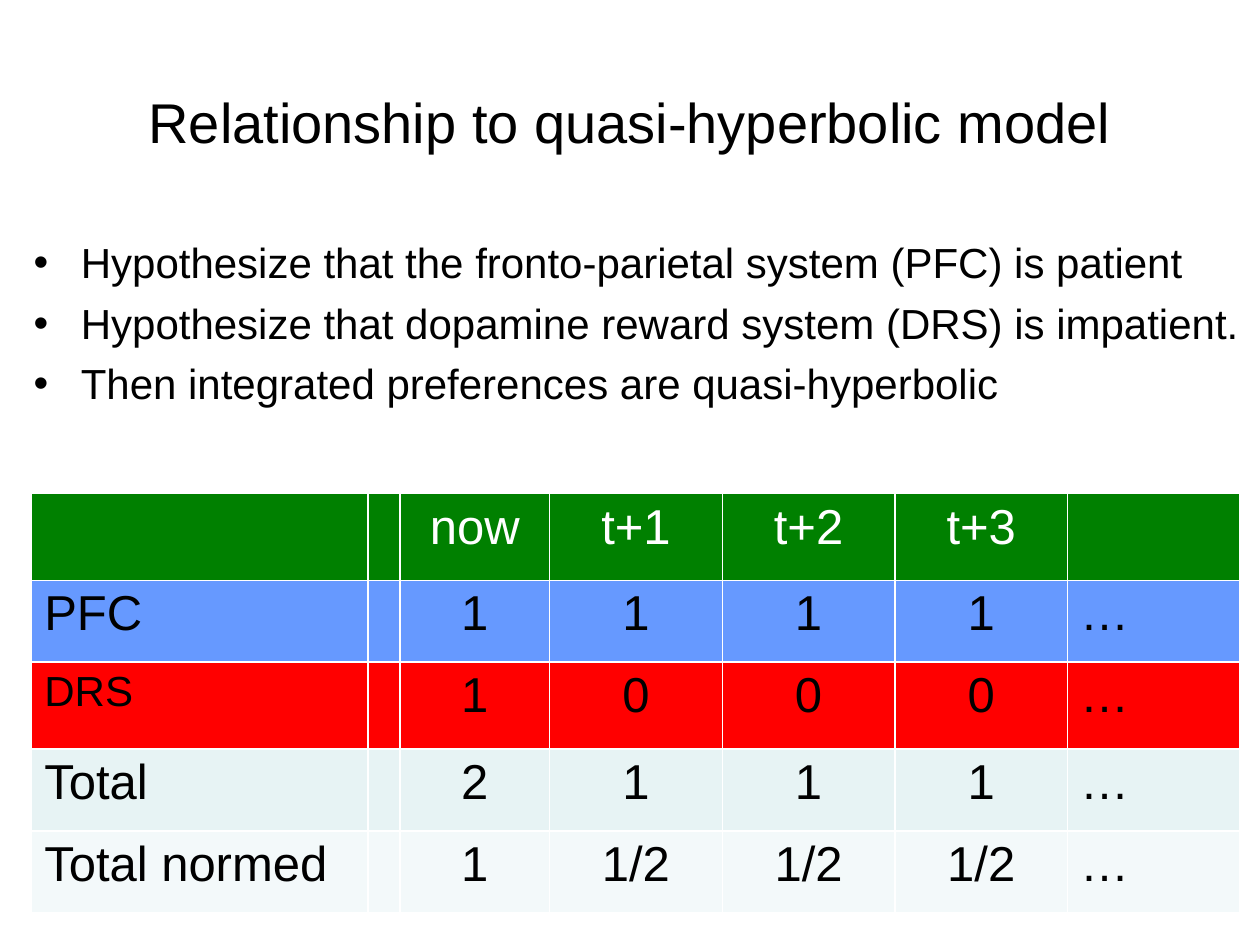
from lxml import etree
from pptx import Presentation
from pptx.dml.color import RGBColor
from pptx.enum.text import MSO_ANCHOR, PP_ALIGN
from pptx.oxml.ns import qn
from pptx.util import Cm, Pt

LEFT, MID = PP_ALIGN.LEFT, PP_ALIGN.CENTER
CENTER = MSO_ANCHOR.MIDDLE
BLACK = RGBColor(0, 0, 0)
WHITE = RGBColor(255, 255, 255)
GREEN = RGBColor(0, 128, 0)
BLUE = RGBColor(0x66, 0x99, 0xFF)
RED = RGBColor(255, 0, 0)
TEAL = RGBColor(0xE7, 0xF3, 0xF4)
PALE = RGBColor(0xF3, 0xF9, 0xFA)


def write(para, text, size=28, color=BLACK, align=LEFT):
    para.alignment = align
    run = para.add_run()
    run.text = text
    font = run.font
    font.name = "Arial"
    font.size = Pt(size)
    font.bold = False
    font.color.rgb = color


deck = Presentation()
deck.slide_width, deck.slide_height = Cm(25.4), Cm(19.05)
slide = deck.slides.add_slide(deck.slide_layouts[5])

title = slide.shapes.title
title.left, title.top = Cm(1.9), Cm(0.85)
title.width, title.height = Cm(21.6), Cm(3.18)
title.text_frame.vertical_anchor = CENTER
write(title.text_frame.paragraphs[0], "Relationship to quasi-hyperbolic model",
      size=32, align=MID)

points = [
    "Hypothesize that the fronto-parietal system (PFC) is patient",
    "Hypothesize that dopamine reward system (DRS) is impatient.",
    "Then integrated preferences are quasi-hyperbolic",
]
box = slide.shapes.add_textbox(Cm(0.43), Cm(4.65), Cm(25.4), Cm(12.07))
frame = box.text_frame
frame.word_wrap = True
for i, point in enumerate(points):
    para = frame.add_paragraph() if i else frame.paragraphs[0]
    write(para, point, size=24)
    para.space_before = Pt(5.8)
    props = para._p.get_or_add_pPr()
    props.set("marL", str(Cm(0.95)))
    props.set("indent", str(-Cm(0.95)))
    etree.SubElement(props, qn("a:buFont")).set("typeface", "Arial")
    etree.SubElement(props, qn("a:buChar")).set("char", "•")

widths = [6.78, 0.64, 3.02] + [3.48] * 4
heights = [1.75, 1.65, 1.75, 1.65, 1.65]
rows = [
    (GREEN, ["", "", "now", "t+1", "t+2", "t+3", ""]),
    (BLUE, ["PFC", "", "1", "1", "1", "1", "…"]),
    (RED, ["DRS", "", "1", "0", "0", "0", "…"]),
    (TEAL, ["Total", "", "2", "1", "1", "1", "…"]),
    (PALE, ["Total normed", "", "1", "1/2", "1/2", "1/2", "…"]),
]
table = slide.shapes.add_table(len(rows), len(widths), Cm(0.64), Cm(9.95),
                               Cm(sum(widths)), Cm(sum(heights))).table
for col, width in zip(table.columns, widths):
    col.width = Cm(width)
for r, (fill, texts) in enumerate(rows):
    table.rows[r].height = Cm(heights[r])
    for c, text in enumerate(texts):
        cell = table.cell(r, c)
        cell.fill.solid()
        cell.fill.fore_color.rgb = fill
        if text:
            write(cell.text_frame.paragraphs[0], text,
                  size=24 if text == "DRS" else 28,
                  color=BLACK if r else WHITE,
                  align=MID if 2 <= c <= 5 else LEFT)

deck.save("out.pptx")
